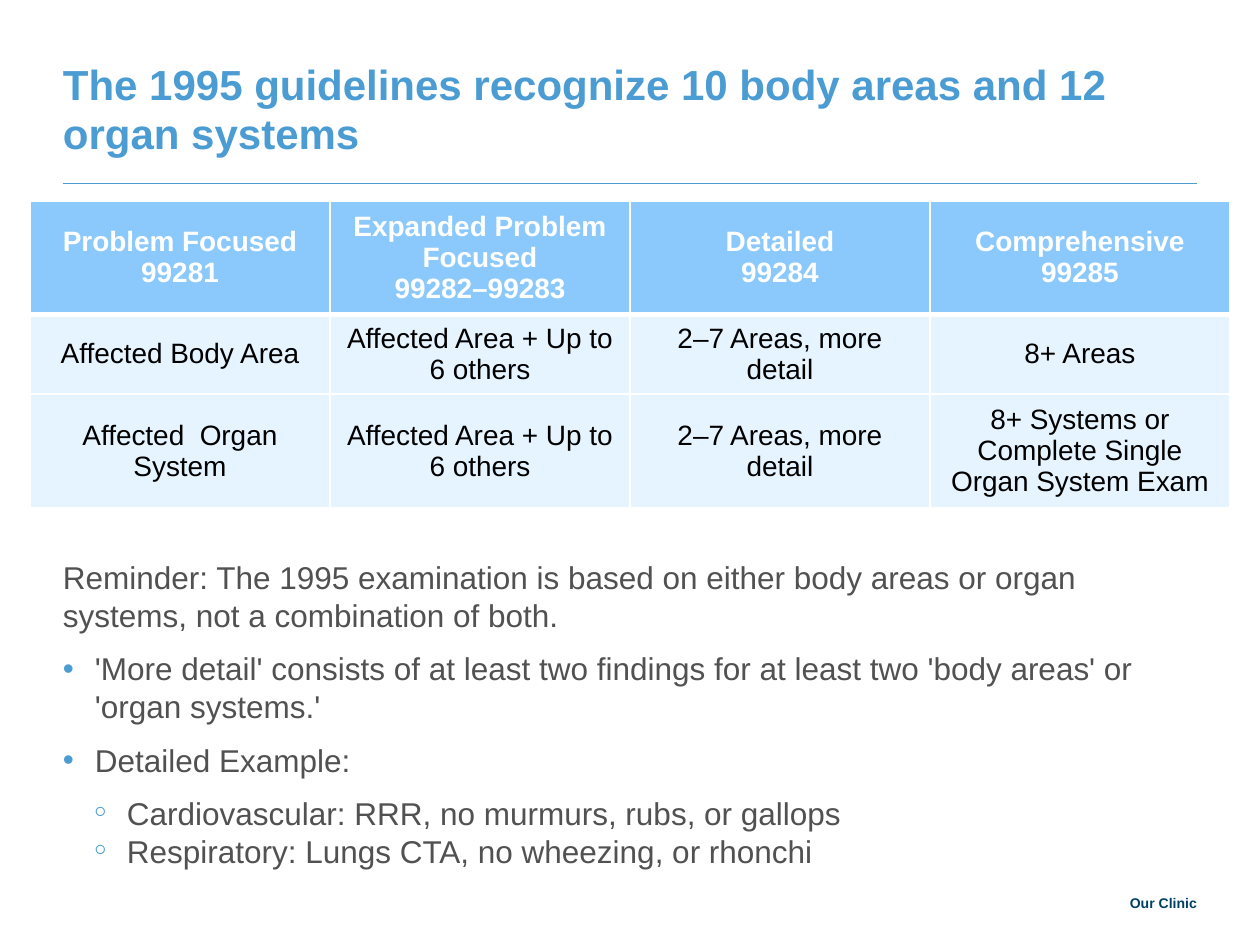
from dataclasses import dataclass

from lxml.etree import SubElement
from pptx import Presentation
from pptx.dml.color import RGBColor
from pptx.enum.shapes import MSO_CONNECTOR
from pptx.enum.text import MSO_ANCHOR as Anchor, PP_ALIGN as Align
from pptx.oxml.ns import qn
from pptx.util import Emu, Pt

PX = 914400 / 126


@dataclass(frozen=True)
class Theme:
    """Colours, font and type sizes of the slide."""
    font: str = "Arial"
    accent: str = "4B9CD3"
    body: str = "515151"
    brand: str = "004163"
    white: str = "FFFFFF"
    black: str = "000000"
    header_fill: str = "8BC9FD"
    cell_fill: str = "E5F4FF"
    title_size: int = 24
    body_size: int = 18
    table_size: int = 16
    footer_size: int = 8


THEME = Theme()
HEADERS = [
    ("Problem Focused", "99281"),
    ("Expanded Problem Focused", "99282–99283"),
    ("Detailed", "99284"),
    ("Comprehensive", "99285"),
]
ROWS = [
    ("Affected Body Area", "Affected Area + Up to 6 others",
     "2–7 Areas, more detail", "8+ Areas"),
    ("Affected  Organ System", "Affected Area + Up to 6 others",
     "2–7 Areas, more detail", "8+ Systems or Complete Single Organ System Exam"),
]
ROW_HEIGHTS = (105, 75, 105)
NOTES = [
    (0, "Reminder: The 1995 examination is based on either body areas or organ "
        "systems, not a combination of both."),
    (1, "'More detail' consists of at least two findings for at least two "
        "'body areas' or 'organ systems.'"),
    (1, "Detailed Example:"),
    (2, "Cardiovascular: RRR, no murmurs, rubs, or gallops"),
    (2, "Respiratory: Lungs CTA, no wheezing, or rhonchi"),
]
BULLETS = {1: ("•", 100), 2: ("￮", 80)}


def px(length):
    """Turn pixels into EMU."""
    return Emu(round(length * PX))


def write(frame, text, *, size, color, bold=False, align=Align.LEFT,
          line=None, after=0):
    """Add one formatted paragraph to a text frame and return it."""
    paragraph = frame.paragraphs[0]
    if paragraph.runs:
        paragraph = frame.add_paragraph()
    paragraph.alignment = align
    paragraph.space_after = Pt(after)
    if line:
        paragraph.line_spacing = line
    run = paragraph.add_run()
    run.text = text
    run.font.name = THEME.font
    run.font.size = Pt(size)
    run.font.bold = bold
    run.font.color.rgb = RGBColor.from_string(color)
    return paragraph


def add_frame(slide, box, anchor=Anchor.TOP, inset_top=0):
    """Add a wrapping text box and return its text frame."""
    frame = slide.shapes.add_textbox(*map(px, box)).text_frame
    frame.word_wrap = True
    frame.vertical_anchor = anchor
    frame.margin_left = frame.margin_right = frame.margin_bottom = 0
    frame.margin_top = px(inset_top)
    return frame


def set_bullet(paragraph, level):
    """Give a paragraph the bullet and hanging indent of its level."""
    character, percent = BULLETS[level]
    properties = paragraph._p.get_or_add_pPr()
    properties.set("marL", str(px(32 * level)))
    properties.set("indent", str(-px(32)))
    color = SubElement(properties, qn("a:buClr"))
    SubElement(color, qn("a:srgbClr"), val=THEME.accent)
    SubElement(properties, qn("a:buSzPct"), val=str(percent * 1000))
    SubElement(properties, qn("a:buFont"), typeface=THEME.font)
    SubElement(properties, qn("a:buChar"), char=character)


def set_borders(cell, top, bottom):
    """Draw white borders, with the top and bottom widths in points."""
    properties = cell._tc.get_or_add_tcPr()
    for position, (side, width) in enumerate(
            (("L", 1), ("R", 1), ("T", top), ("B", bottom))):
        border = SubElement(properties, qn(f"a:ln{side}"), w=str(Pt(width)))
        fill = SubElement(border, qn("a:solidFill"))
        SubElement(fill, qn("a:srgbClr"), val=THEME.white)
        properties.insert(position, border)


def add_title(slide, box):
    """Place the title with a thin rule along the bottom of the box."""
    left, top, width, height = box
    frame = add_frame(slide, (left, top, width - 50, height - 25), Anchor.BOTTOM)
    write(frame, "The 1995 guidelines recognize 10 body areas and 12 organ systems",
          size=THEME.title_size, color=THEME.accent, bold=True, line=Pt(28))
    bottom = px(top + height)
    rule = slide.shapes.add_connector(
        MSO_CONNECTOR.STRAIGHT, px(left), bottom, px(left + width), bottom)
    rule.line.color.rgb = RGBColor.from_string(THEME.accent)
    rule.line.width = Pt(0.5)
    SubElement(rule._element.spPr, qn("a:effectLst"))


def fill_cell(cell, lines, header, top, bottom):
    """Write and format one table cell."""
    cell.fill.solid()
    cell.fill.fore_color.rgb = RGBColor.from_string(
        THEME.header_fill if header else THEME.cell_fill)
    cell.vertical_anchor = Anchor.MIDDLE
    for text in lines:
        write(cell.text_frame, text, size=THEME.table_size, bold=header,
              color=THEME.white if header else THEME.black, align=Align.CENTER)
    set_borders(cell, top, bottom)


def add_exam_table(slide, box):
    """Place the table of examination levels."""
    table = slide.shapes.add_table(
        len(ROW_HEIGHTS), len(HEADERS), *map(px, box)).table
    table.horz_banding = False
    for column in table.columns:
        column.width = px(box[2] / len(HEADERS))
    for row, height in zip(table.rows, ROW_HEIGHTS):
        row.height = px(height)
    contents = [HEADERS] + [[(text,) for text in row] for row in ROWS]
    for row_index, row in enumerate(contents):
        header = row_index == 0
        for column_index, lines in enumerate(row):
            fill_cell(table.cell(row_index, column_index), lines, header,
                      top=3 if row_index == 1 else 1, bottom=3 if header else 1)


def add_notes(slide, box):
    """Place the reminder and its bulleted details."""
    frame = add_frame(slide, box, inset_top=10)
    for level, text in NOTES:
        paragraph = write(frame, text, size=THEME.body_size, color=THEME.body,
                          after=0 if level == 2 else 9)
        if level:
            set_bullet(paragraph, level)


def add_footer(slide, box):
    """Place the organization name at the bottom right."""
    write(add_frame(slide, box, Anchor.BOTTOM), "Our Clinic",
          size=THEME.footer_size, color=THEME.brand, bold=True, align=Align.RIGHT)


def main():
    """Build the slide and save it."""
    presentation = Presentation()
    presentation.slide_width, presentation.slide_height = px(1260), px(945)
    slide = presentation.slides.add_slide(presentation.slide_layouts[6])
    add_footer(slide, (1042, 882, 155, 29))
    add_title(slide, (63, 48, 1134, 135))
    add_notes(slide, (63, 548, 1134, 316))
    add_exam_table(slide, (30, 201, 1200, sum(ROW_HEIGHTS)))
    presentation.save("out.pptx")


if __name__ == "__main__":
    main()
